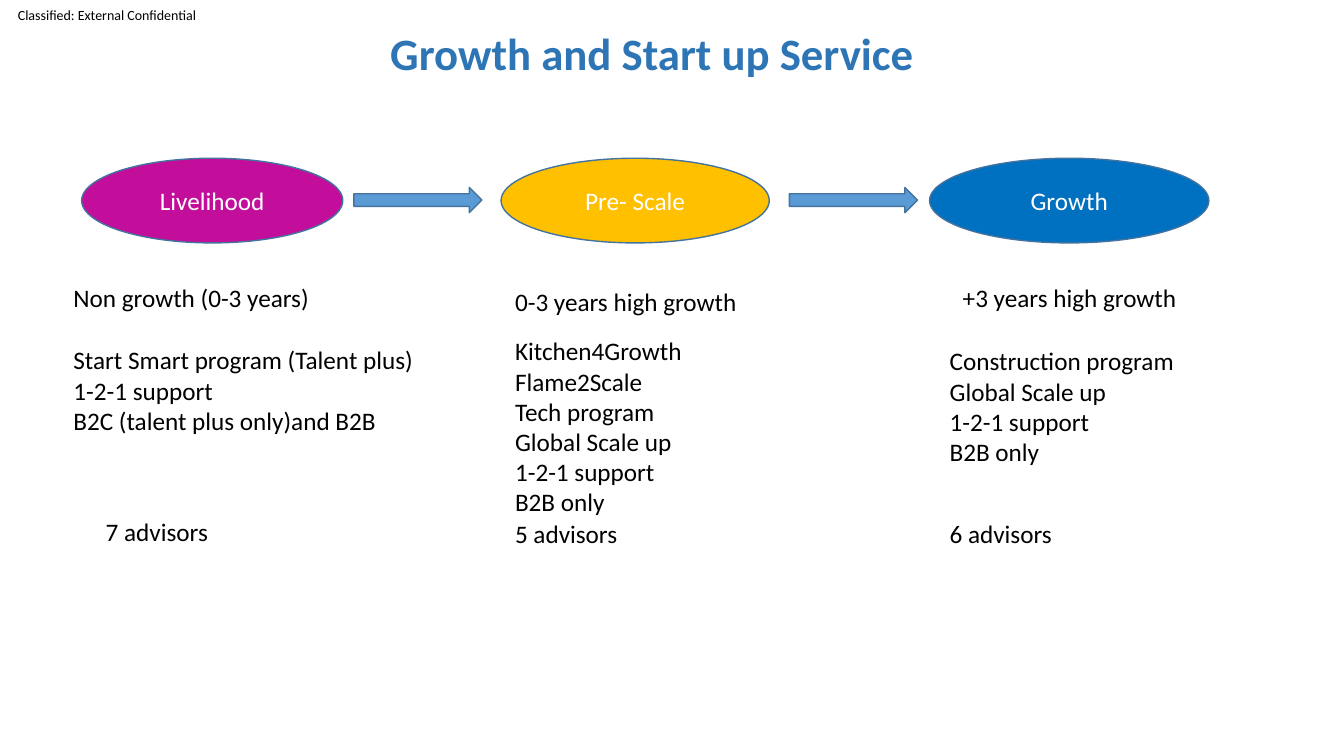
from dataclasses import dataclass

from pptx import Presentation
from pptx.dml.color import RGBColor
from pptx.enum import shapes, text
from pptx.util import Inches, Pt

COLORS = {
    "title": "2E75B6", "text": "000000", "label": "FFFFFF", "outline": "43739E",
    "arrow": "5B9BD5", "livelihood": "C20E9B", "prescale": "FFC000", "growth": "0070C0",
}
FONT = "Calibri"
STAGE_TOP, STAGE_HEIGHT = 1.57, 0.84
ARROW_LEFTS = (3.51, 7.83)


@dataclass(frozen=True)
class Note:
    left: float
    top: float
    width: float
    height: float
    lines: tuple[str, ...]


@dataclass(frozen=True)
class Stage:
    name: str
    color: str
    left: float
    width: float
    notes: tuple[Note, ...]


STAGES = (
    Stage("Livelihood", "livelihood", 0.81, 2.59, (
        Note(0.63, 2.75, 2.59, 0.4, ("Non growth (0-3 years)",)),
        Note(0.63, 3.37, 3.89, 1.01, ("Start Smart program (Talent plus)", "1-2-1 support",
                                      "B2C (talent plus only)and B2B")),
        Note(0.95, 5.07, 1.23, 0.4, ("7 advisors",)),
    )),
    Stage("Pre- Scale", "prescale", 4.97, 2.66, (
        Note(5.01, 2.79, 2.58, 0.4, ("0-3 years high growth",)),
        Note(5.01, 3.28, 2.58, 1.92, ("Kitchen4Growth", "Flame2Scale", "Tech program",
                                      "Global Scale up", "1-2-1 support", "B2B only")),
        Note(5.01, 5.09, 1.23, 0.4, ("5 advisors",)),
    )),
    Stage("Growth", "growth", 9.22, 2.77, (
        Note(9.45, 2.75, 2.58, 0.4, ("+3 years high growth",)),
        Note(9.32, 3.38, 2.58, 1.31, ("Construction program", "Global Scale up",
                                      "1-2-1 support", "B2B only")),
        Note(9.32, 5.09, 1.23, 0.4, ("6 advisors",)),
    )),
)


def rgb(name: str) -> RGBColor:
    return RGBColor.from_string(COLORS[name])


def write(sp, lines: tuple[str, ...], color: str = "text", size: float = 18,
          bold: bool = False, align=text.PP_ALIGN.LEFT,
          anchor=text.MSO_ANCHOR.TOP, wrap: bool = True) -> None:
    tf = sp.text_frame
    frame_format = {"auto_size": text.MSO_AUTO_SIZE.NONE, "word_wrap": wrap,
                    "vertical_anchor": anchor}
    for key, value in frame_format.items():
        setattr(tf, key, value)
    for i, line in enumerate(lines):
        p = tf.paragraphs[0] if i == 0 else tf.add_paragraph()
        p.alignment = align
        r = p.add_run()
        r.text = line
        for key, value in {"name": FONT, "size": Pt(size), "bold": bold}.items():
            setattr(r.font, key, value)
        r.font.color.rgb = rgb(color)


def add_figure(s, kind, left: float, top: float, width: float, height: float, fill: str):
    sp = s.shapes.add_shape(kind, *map(Inches, (left, top, width, height)))
    sp.shadow.inherit = False
    sp.fill.solid()
    sp.fill.fore_color.rgb = rgb(fill)
    sp.line.color.rgb = rgb("outline")
    sp.line.width = Pt(1)
    return sp


def add_note(s, note: Note) -> None:
    box = map(Inches, (note.left, note.top, note.width, note.height))
    write(s.shapes.add_textbox(*box), note.lines)


def add_title(s) -> None:
    title = s.shapes.title
    box = {"left": 3.77, "top": 0.21, "width": 5.54, "height": 0.64}
    for key, value in box.items():
        setattr(title, key, Inches(value))
    write(title, ("Growth and Start up Service",), "title", 32, bold=True, wrap=False)


def add_classification(s) -> None:
    sp = s.shapes.add_textbox(0, 0, Inches(2.12), Inches(0.29))
    for side in ("left", "top", "right", "bottom"):
        setattr(sp.text_frame, f"margin_{side}", 0)
    write(sp, ("Classified: External Confidential",), size=10,
          align=text.PP_ALIGN.CENTER, anchor=text.MSO_ANCHOR.MIDDLE)


def main() -> None:
    prs = Presentation()
    prs.slide_width, prs.slide_height = Inches(13.33), Inches(7.5)
    s = prs.slides.add_slide(prs.slide_layouts[5])
    add_title(s)
    add_classification(s)
    for stage in STAGES:
        sp = add_figure(s, shapes.MSO_SHAPE.OVAL, stage.left, STAGE_TOP,
                        stage.width, STAGE_HEIGHT, stage.color)
        write(sp, (stage.name,), "label", align=text.PP_ALIGN.CENTER,
              anchor=text.MSO_ANCHOR.MIDDLE)
        for note in stage.notes:
            add_note(s, note)
    for left in ARROW_LEFTS:
        add_figure(s, shapes.MSO_SHAPE.RIGHT_ARROW, left, 1.86, 1.27, 0.25, "arrow")
    prs.save("out.pptx")


if __name__ == "__main__":
    main()
